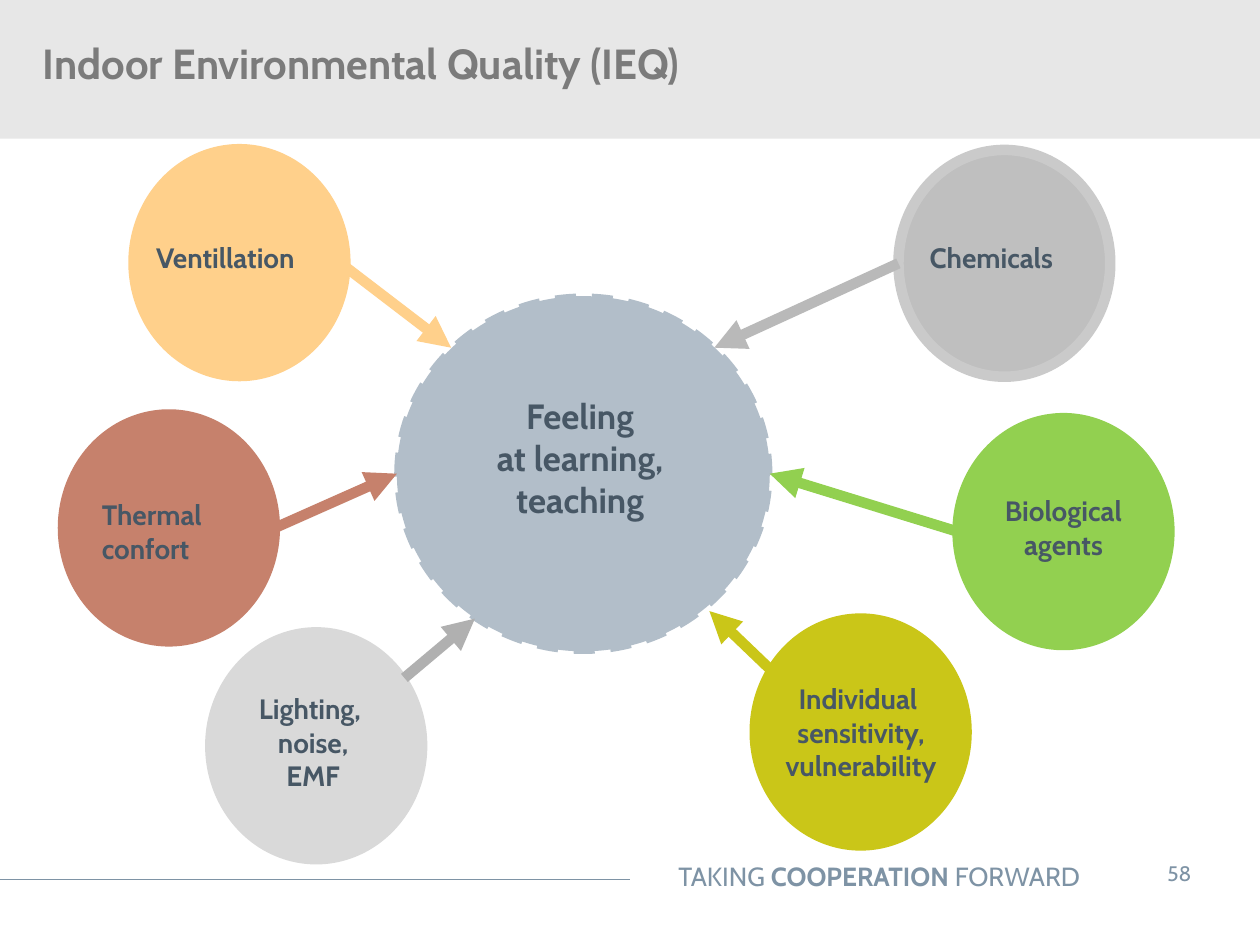
from lxml.etree import SubElement
from pptx import Presentation
from pptx.dml.color import RGBColor as RGB
from pptx.enum.dml import MSO_LINE as Dash
from pptx.enum.shapes import MSO_CONNECTOR as Link, MSO_SHAPE as Kind
from pptx.enum.text import MSO_ANCHOR as Anchor, PP_ALIGN as Align
from pptx.oxml.ns import qn
from pptx.util import Pt

BAND = RGB(0xE7, 0xE7, 0xE7)
HEAD = RGB(0x7B, 0x7B, 0x7B)
TEXT = RGB(0x47, 0x57, 0x65)
FOOT = RGB(0x7E, 0x93, 0xA5)
HUB = RGB(0xB2, 0xBE, 0xC9)
PEACH = RGB(0xFF, 0xD0, 0x8B)
RUST = RGB(0xC6, 0x81, 0x6C)
PALE = RGB(0xD9, 0xD9, 0xD9)
GREY = RGB(0xBF, 0xBF, 0xBF)
RIM = RGB(0xCA, 0xCA, 0xCA)
ASH = RGB(0xB0, 0xB0, 0xB0)
STEEL = RGB(0xB9, 0xB9, 0xB9)
GREEN = RGB(0x92, 0xD0, 0x50)
OLIVE = RGB(0xCA, 0xC6, 0x18)

SIZE = (121, 129.6)  # width and height of a factor circle
LEFT, MID, RIGHT = Align.LEFT, Align.CENTER, Align.RIGHT

# circle corner, fill, rim, label, label box, alignment, arrow, arrow colour
FACTORS = [
    ((36, 236.9), RUST, RUST, "Thermal\nconfort",
     (51.1, 280.8, 93.6, 46), LEFT, (157, 301.7, 226.8, 270.7), RUST),
    ((120.2, 361.4), PALE, PALE, "Lighting, \vnoise,\vEMF",
     (136.1, 391.7, 85.7, 65.5), MID, (231.1, 387.4, 271.4, 353.5), ASH),
    ((76.3, 85.3), PEACH, PEACH, "Ventillation",
     (82.1, 133.9, 108, 26.6), LEFT, (196.6, 151.9, 257.8, 198.7), PEACH),
    ((513.4, 85.7), GREY, RIM, "Chemicals",
     (524.2, 133.9, 96.5, 26.6), LEFT, (513.4, 150.5, 408.2, 198.7), STEEL),
    ((547.2, 239), GREEN, GREEN, "Biological\vagents",
     (564.5, 278.6, 86.4, 46), MID, (547.2, 303.8, 439.9, 270.7), GREEN),
    ((431.3, 353.5), OLIVE, OLIVE, "Individual \vsensitivity,\vvulnerability",
     (437, 385.9, 110.2, 65.5), MID, (439.2, 381.6, 405.4, 349.2), OLIVE),
]


def style(font, size, color, bold=False):
    for key, val in dict(name="Cabin", size=Pt(size), bold=bold).items():
        setattr(font, key, val)
    font.color.rgb = color


def setup(frame, pad=(7.2, 3.6), wrap=True, anchor=Anchor.TOP):
    side, edge = map(Pt, pad)
    form = dict(margin_left=side, margin_right=side, margin_top=edge,
                margin_bottom=edge, word_wrap=wrap, vertical_anchor=anchor)
    for key, val in form.items():
        setattr(frame, key, val)


def label(slide, box, text, size, align, color=TEXT, bold=True, **form):
    frame = slide.shapes.add_textbox(*map(Pt, box)).text_frame
    setup(frame, **form)
    frame.text = text
    for para in frame.paragraphs:
        para.alignment = align
        for run in para.runs:
            style(run.font, size, color, bold)
    return frame


def solid(slide, kind, box, fill, rim=None, width=6):
    shape = slide.shapes.add_shape(kind, *map(Pt, box))
    shape.shadow.inherit = False
    shape.fill.solid()
    shape.fill.fore_color.rgb = fill
    if rim is None:
        shape.line.fill.background()
    else:
        shape.line.color.rgb = rim
        shape.line.width = Pt(width)
    return shape


def line(slide, ends, color, width, head=False):
    link = slide.shapes.add_connector(Link.STRAIGHT, *map(Pt, ends))
    link.line.color.rgb = color
    link.line.width = Pt(width)
    if head:
        SubElement(link.line._get_or_add_ln(), qn("a:tailEnd"), type="triangle")
    SubElement(link._element.spPr, qn("a:effectLst"))


def header(slide, box):
    x, y, w, h = box
    solid(slide, Kind.RECTANGLE, box, BAND)
    title = slide.shapes.title
    place = dict(left=x, top=y + 18, width=538.6, height=36)
    for key, val in place.items():
        setattr(title, key, Pt(val))
    frame = title.text_frame
    setup(frame)
    frame.margin_left = Pt(24.5)
    frame.text = "Indoor Environmental Quality (IEQ)"
    para = frame.paragraphs[0]
    para.alignment = LEFT
    style(para.runs[0].font, 24, HEAD, True)
    # Bring the title in front of the band
    slide.shapes._spTree.append(title._element)


def footer(slide, box):
    x, y, w, h = box
    line(slide, (x, y + 18, x + w / 2, y + 18), FOOT, 0.75)
    motto = label(slide, (x + 279.4, y + 3.6, 337.7, 25.2), "TAKING ", 15, RIGHT,
                  FOOT, False, pad=(0, 0), anchor=Anchor.MIDDLE)
    for text, bold in (("COOPERATION", True), (" FORWARD", False)):
        run = motto.paragraphs[0].add_run()
        run.text = text
        style(run.font, 15, FOOT, bold)
    label(slide, (x + 647.3, y, 53.3, h), "58", 12, MID, FOOT, False,
          pad=(14.4, 7.2), anchor=Anchor.MIDDLE)


def diagram(slide, box):
    x, y, w, h = box
    # Central circle
    hub = solid(slide, Kind.OVAL, box, HUB, HUB, 3)
    hub.line.dash_style = Dash.DASH
    # Factor circles with their labels
    for spot, fill, rim, text, area, align, *_ in FACTORS:
        solid(slide, Kind.OVAL, spot + SIZE, fill, rim)
        label(slide, area, text, 16, align, wrap=align == LEFT)
    label(slide, (x + 37.4, y + 52.6, 134.6, 79.2),
          "Feeling\vat learning,\nteaching", 20, MID, wrap=False)
    # Arrows towards the centre
    for *_, ends, color in FACTORS:
        line(slide, ends, color, 6, head=True)


def main():
    deck = Presentation()
    deck.slide_width, deck.slide_height = Pt(720), Pt(540)
    slide = deck.slides.add_slide(deck.slide_layouts[5])
    header(slide, (0, 0, 720, 79.2))
    footer(slide, (0, 484.6, 720, 28.8))
    diagram(slide, (226.8, 169.2, 213.1, 203))
    deck.save("out.pptx")


if __name__ == "__main__":
    main()
